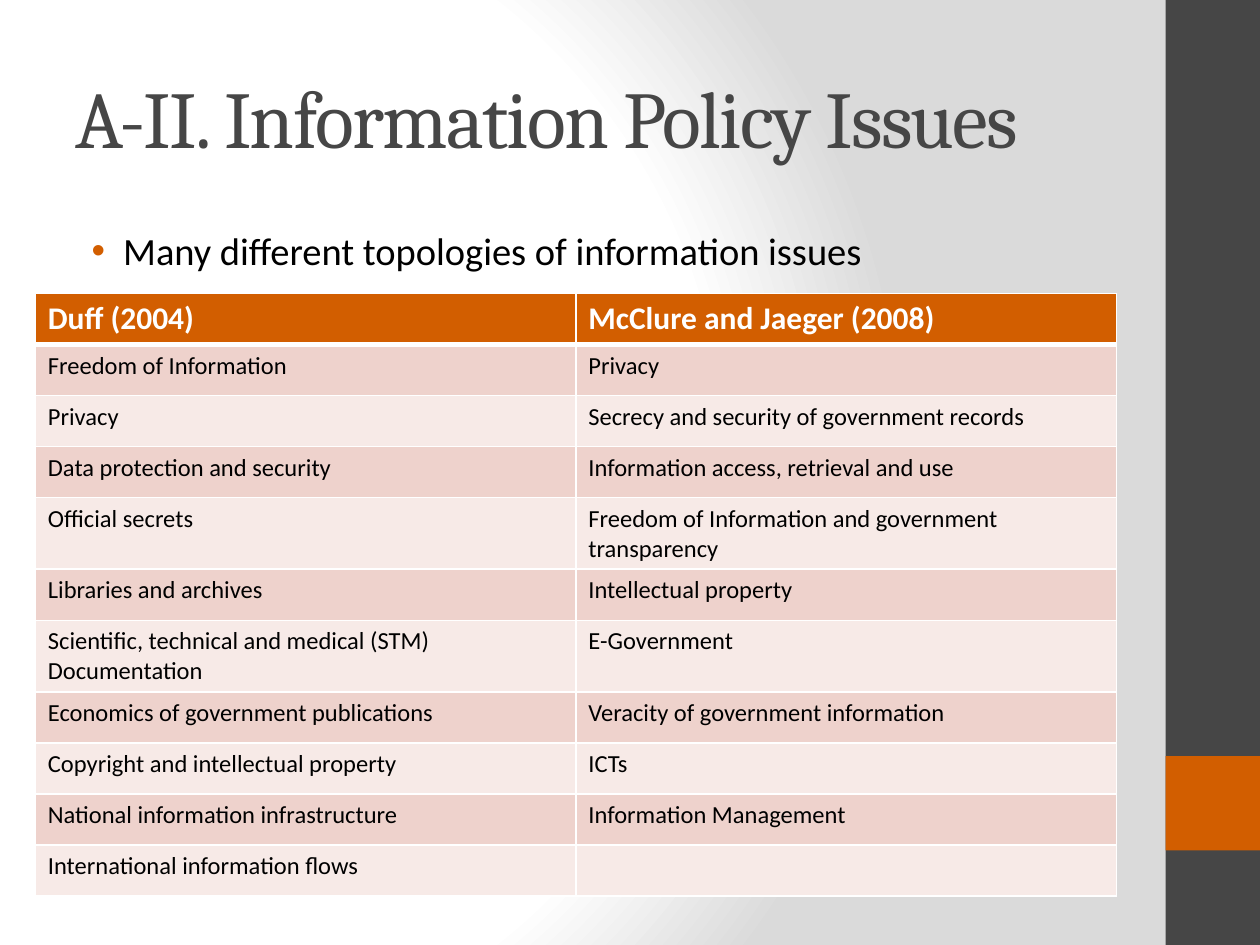
import pptx
import pptx.dml.color
import pptx.enum.text
import pptx.oxml
import pptx.oxml.ns
import pptx.util
from dataclasses import dataclass
from lxml import etree
from pptx.util import Inches

qn = pptx.oxml.ns.qn


@dataclass(frozen=True)
class Theme:
    dark: str = "464646"
    accent: str = "D25E00"
    text: str = "000000"
    light: str = "FFFFFF"
    shade: str = "DADADA"
    bands: tuple = ("EED2CC", "F7EAE7")
    heading_font: str = "Cambria"
    body_font: str = "Calibri"
    title_size: int = 46
    bullet_size: int = 22
    header_size: int = 18
    cell_size: int = 14


THEME = Theme()

ISSUES = [
    ("Duff (2004)", "McClure and Jaeger (2008)"),
    ("Freedom of Information", "Privacy"),
    ("Privacy", "Secrecy and security of government records"),
    ("Data protection and security", "Information access, retrieval and use"),
    ("Official secrets", "Freedom of Information and government transparency"),
    ("Libraries and archives", "Intellectual property"),
    ("Scientific, technical and medical (STM) Documentation", "E-Government"),
    ("Economics of government publications", "Veracity of government information"),
    ("Copyright and intellectual property", "ICTs"),
    ("National information infrastructure", "Information Management"),
    ("International information flows", ""),
]


def rgb(color):
    return pptx.dml.color.RGBColor.from_string(color)


def set_font(font, color, **values):
    for name, value in values.items():
        setattr(font, name, value)
    font.color.rgb = rgb(color)


def add_solid(parent, tag, color):
    holder = etree.SubElement(parent, qn(tag))
    etree.SubElement(holder, qn("a:srgbClr"), val=color)


def add_line(slide, box, text, anchor, color, **font):
    """Place a wrapped text box with one paragraph and return the paragraph."""
    frame = slide.shapes.add_textbox(*box).text_frame
    frame.word_wrap = True
    frame.vertical_anchor = anchor
    line = frame.paragraphs[0]
    line.add_run().text = text
    set_font(line.runs[0].font, color, **font)
    return line


def paint_background(slide):
    stops = "".join(
        f'<a:gs pos="{pos * 1000}"><a:srgbClr val="{color}"/></a:gs>'
        for pos, color in ((0, THEME.light), (75, THEME.light), (100, THEME.shade))
    )
    background = pptx.oxml.parse_xml(
        f'<p:bg {pptx.oxml.ns.nsdecls("p", "a")}><p:bgPr><a:gradFill rotWithShape="1">'
        f'<a:gsLst>{stops}</a:gsLst><a:path path="circle">'
        '<a:fillToRect l="20000" t="50000" r="100000" b="50000"/></a:path>'
        "</a:gradFill><a:effectLst/></p:bgPr></p:bg>"
    )
    slide.element.find(qn("p:cSld")).insert(0, background)


def add_sidebar(slide, box):
    left, top, width, height = box
    accent_top = top + Inches(6)
    for bar_top, bar_height, color in (
        (top, height, THEME.dark),
        (accent_top, width, THEME.accent),
    ):
        bar = slide.shapes.add_shape(
            pptx.enum.shapes.MSO_SHAPE.RECTANGLE, left, bar_top, width, bar_height
        )
        bar.shadow.inherit = False
        bar.fill.solid()
        bar.fill.fore_color.rgb = rgb(color)
        bar.line.fill.background()


def add_title(slide, box):
    title = add_line(
        slide, box, "A-II. Information Policy Issues",
        pptx.enum.text.MSO_ANCHOR.MIDDLE, THEME.dark,
        name=THEME.heading_font, size=pptx.util.Pt(THEME.title_size),
    )
    # Tighten the letter spacing by one point
    title.runs[0].font._element.set("spc", "-100")


def add_bullet(slide, box):
    bullet = add_line(
        slide, box, "Many different topologies of information issues",
        pptx.enum.text.MSO_ANCHOR.TOP, THEME.text,
        name=THEME.body_font, size=pptx.util.Pt(THEME.bullet_size),
    )
    bullet.space_before = pptx.util.Pt(0.2 * THEME.bullet_size)
    props = bullet._p.get_or_add_pPr()
    props.set("marL", str(Inches(0.38)))
    props.set("indent", str(Inches(-0.25)))
    add_solid(props, "a:buClr", THEME.accent)
    etree.SubElement(props, qn("a:buFont"), typeface="Arial")
    etree.SubElement(props, qn("a:buChar"), char="•")


def style_cell(cell, row):
    header = row == 0
    set_font(
        cell.text_frame.paragraphs[0].font if not cell.text
        else cell.text_frame.paragraphs[0].runs[0].font,
        THEME.light if header else THEME.text,
        name=THEME.body_font, bold=header,
        size=pptx.util.Pt(THEME.header_size if header else THEME.cell_size),
    )
    # Borders come before the fill in the cell properties
    props = cell._tc.get_or_add_tcPr()
    widths = {
        "a:lnL": 1,
        "a:lnR": 1,
        "a:lnT": 3 if row == 1 else 1,
        "a:lnB": 3 if header else 1,
    }
    for tag, width in widths.items():
        border = etree.SubElement(props, qn(tag), w=str(pptx.util.Pt(width)))
        add_solid(border, "a:solidFill", THEME.light)
    cell.fill.solid()
    cell.fill.fore_color.rgb = rgb(THEME.accent if header else THEME.bands[(row - 1) % 2])


def add_issue_table(slide, box):
    table = slide.shapes.add_table(len(ISSUES), len(ISSUES[0]), *box).table
    for row, issues in enumerate(ISSUES):
        for column, issue in enumerate(issues):
            cell = table.cell(row, column)
            cell.text = issue
            style_cell(cell, row)


def main():
    deck = pptx.Presentation()
    deck.slide_width, deck.slide_height = Inches(10), Inches(7.5)
    slide = deck.slides.add_slide(deck.slide_layouts[6])

    paint_background(slide)
    regions = (
        (add_sidebar, (9.25, 0, 0.75, 7.5)),
        (add_title, (0.5, 0.3, 8.33, 1.25)),
        (add_bullet, (0.5, 1.75, 8.33, 5.25)),
        (add_issue_table, (0.28, 2.33, 8.58, 4.46)),
    )
    for place, box in regions:
        place(slide, [Inches(length) for length in box])

    deck.save("out.pptx")


if __name__ == "__main__":
    import pptx.enum.shapes
    main()
